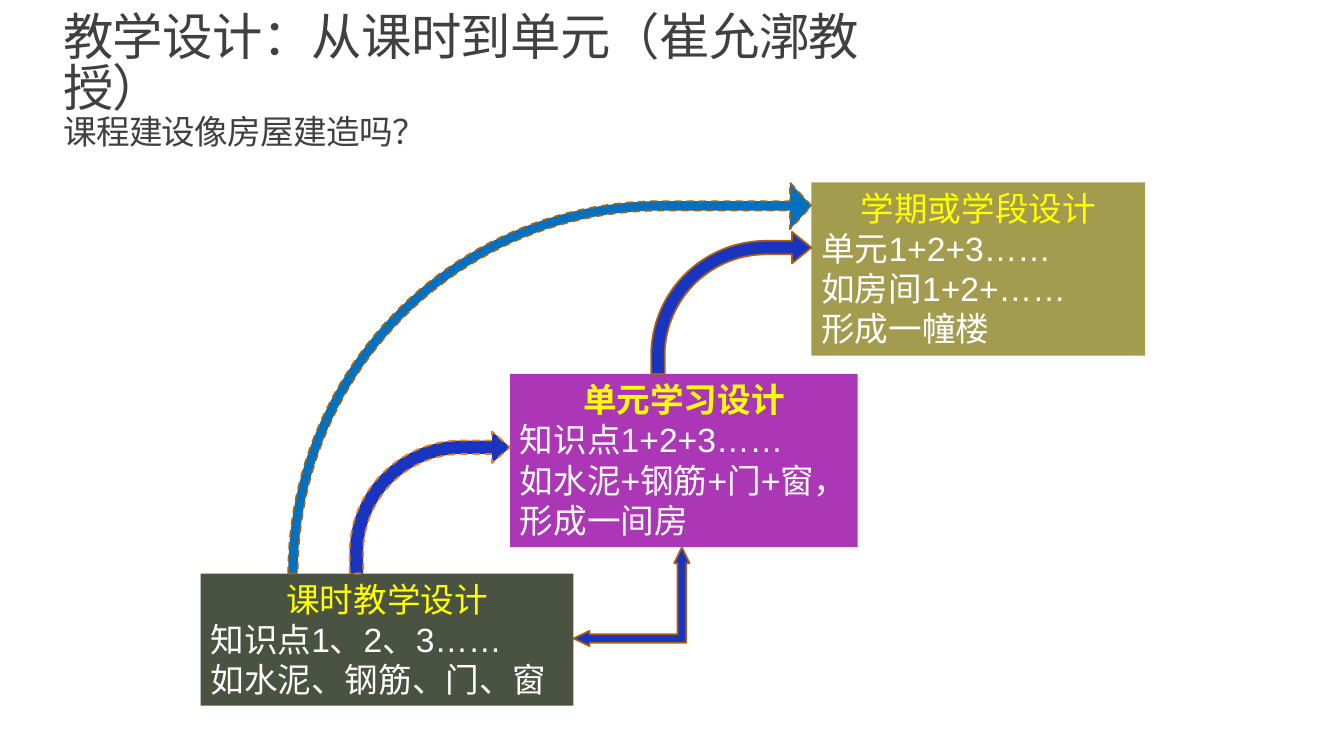
import pptx
import pptx.util
import pptx.dml.color
import pptx.enum.dml
import pptx.enum.shapes
import pptx.enum.text

Pt = pptx.util.Pt
ALIGN = pptx.enum.text.PP_ALIGN
ANCHOR = pptx.enum.text.MSO_ANCHOR
FIT = pptx.enum.text.MSO_AUTO_SIZE
SHAPE = pptx.enum.shapes.MSO_SHAPE

TITLE = "教学设计：从课时到单元（崔允漷教授）"
SUBTITLE = "课程建设像房屋建造吗？"
TITLE_BOX = (38, 21.6, 648, 90)

# name: (left, top, width, height), fill, bold heading, heading, lines
STAGES = {
    "lesson": ((143.3, 409.7, 266.4, 94.3), "4A5242", False, "课时教学设计",
               ["知识点1、2、3……", "如水泥、钢筋、门、窗"]),
    "unit": ((364.3, 267.1, 248.4, 123.8), "AC37B6", True, "单元学习设计",
             ["知识点1+2+3……", "如水泥+钢筋+门+窗，形成一间房"]),
    "term": ((579.6, 130.3, 238.3, 123.8), "A39B4E", False, "学期或学段设计",
             ["单元1+2+3……", "如房间1+2+……", "形成一幢楼"]),
}

# from, to, width, height, adjustments, fill, line, dashed
RISING_ARROWS = [
    ("lesson", "unit", 114.5, 101.5, (0.095, 0.111, 0.126, 0.788), "blue", "orange", True),
    ("unit", "term", 114.5, 101.5, (0.095, 0.111, 0.137, 0.809), "blue", "brown", False),
    ("lesson", "term", 373.7, 279.4, (0.024, 0.06, 0.055, 0.952), "sky", "brown", True),
]
RETURN_ARROW = ("lesson", "unit", 82.8, 70.6, (0.087, 0.077, 0.161), "blue", "brown", False)

THEME = {
    "title": "404040", "heading": "FFFF00", "body": "FFFFFF",
    "blue": "1A34C2", "sky": "0070C0", "orange": "E48312", "brown": "A9610D",
    "title_font": "Calibri", "body_font": "Arial",
    "title_size": 36, "text_size": 24, "line": 1.25,
}


def rgb(value):
    return pptx.dml.color.RGBColor.from_string(value)


def apply(target, values):
    for name, value in values.items():
        setattr(target, name, value)


def add_run(p, text, font, size, color, bold=False):
    r = p.add_run()
    r.text = text
    apply(r.font, {"name": font, "size": Pt(size), "bold": bold})
    r.font.color.rgb = rgb(color)
    return r


def add_filled(slide, kind, box, fill):
    sp = slide.shapes.add_shape(kind, *map(Pt, box))
    sp.shadow.inherit = False
    sp.fill.solid()
    sp.fill.fore_color.rgb = rgb(fill)
    return sp


def add_title(slide):
    sp = slide.shapes.title
    apply(sp, dict(zip(("left", "top", "width", "height"), map(Pt, TITLE_BOX))))
    apply(sp.text_frame, {"vertical_anchor": ANCHOR.BOTTOM, "word_wrap": True,
                          "auto_size": FIT.NONE})
    p = sp.text_frame.paragraphs[0]
    apply(p, {"alignment": ALIGN.LEFT, "line_spacing": 0.85})
    for i, (text, size) in enumerate([(TITLE, THEME["title_size"]),
                                      (SUBTITLE, THEME["text_size"])]):
        if i:
            p.add_line_break()
        r = add_run(p, text, THEME["title_font"], size, THEME["title"])
        r.font._element.set("spc", "-50")


def add_stage(slide, box, fill, bold, heading, lines):
    sp = add_filled(slide, SHAPE.RECTANGLE, box, fill)
    sp.line.fill.background()
    tf = sp.text_frame
    apply(tf, {"word_wrap": True, "vertical_anchor": ANCHOR.TOP,
               "auto_size": FIT.SHAPE_TO_FIT_TEXT})
    for i, text in enumerate([heading, *lines]):
        p = tf.add_paragraph() if i else tf.paragraphs[0]
        p.alignment = ALIGN.LEFT if i else ALIGN.CENTER
        add_run(p, text, THEME["body_font"], THEME["text_size"],
                THEME["body" if i else "heading"], bold and not i)


def add_arrow(slide, kind, box, adjustments, fill, line, dashed):
    sp = add_filled(slide, kind, box, THEME[fill])
    for i, value in enumerate(adjustments):
        sp.adjustments[i] = value
    sp.line.color.rgb = rgb(THEME[line])
    sp.line.width = Pt(THEME["line"])
    if dashed:
        sp.line.dash_style = pptx.enum.dml.MSO_LINE.DASH


def main():
    prs = pptx.Presentation()
    apply(prs, {"slide_width": Pt(960), "slide_height": Pt(540)})
    slide = prs.slides.add_slide(prs.slide_layouts[5])
    add_title(slide)
    for stage in STAGES.values():
        add_stage(slide, *stage)

    # Rising arrows run from the top of one stage to the left side of another.
    for start, end, width, height, *style in RISING_ARROWS:
        top, left = STAGES[start][0][1], STAGES[end][0][0]
        add_arrow(slide, SHAPE.BENT_ARROW,
                  (left - width, top - height, width, height), *style)

    # The return arrow joins the right side of a stage to the bottom of the next.
    start, end, width, height, *style = RETURN_ARROW
    x, _, w, _ = STAGES[start][0]
    _, y, _, h = STAGES[end][0]
    add_arrow(slide, SHAPE.LEFT_UP_ARROW, (x + w, y + h, width, height), *style)
    prs.save("out.pptx")


if __name__ == "__main__":
    main()
